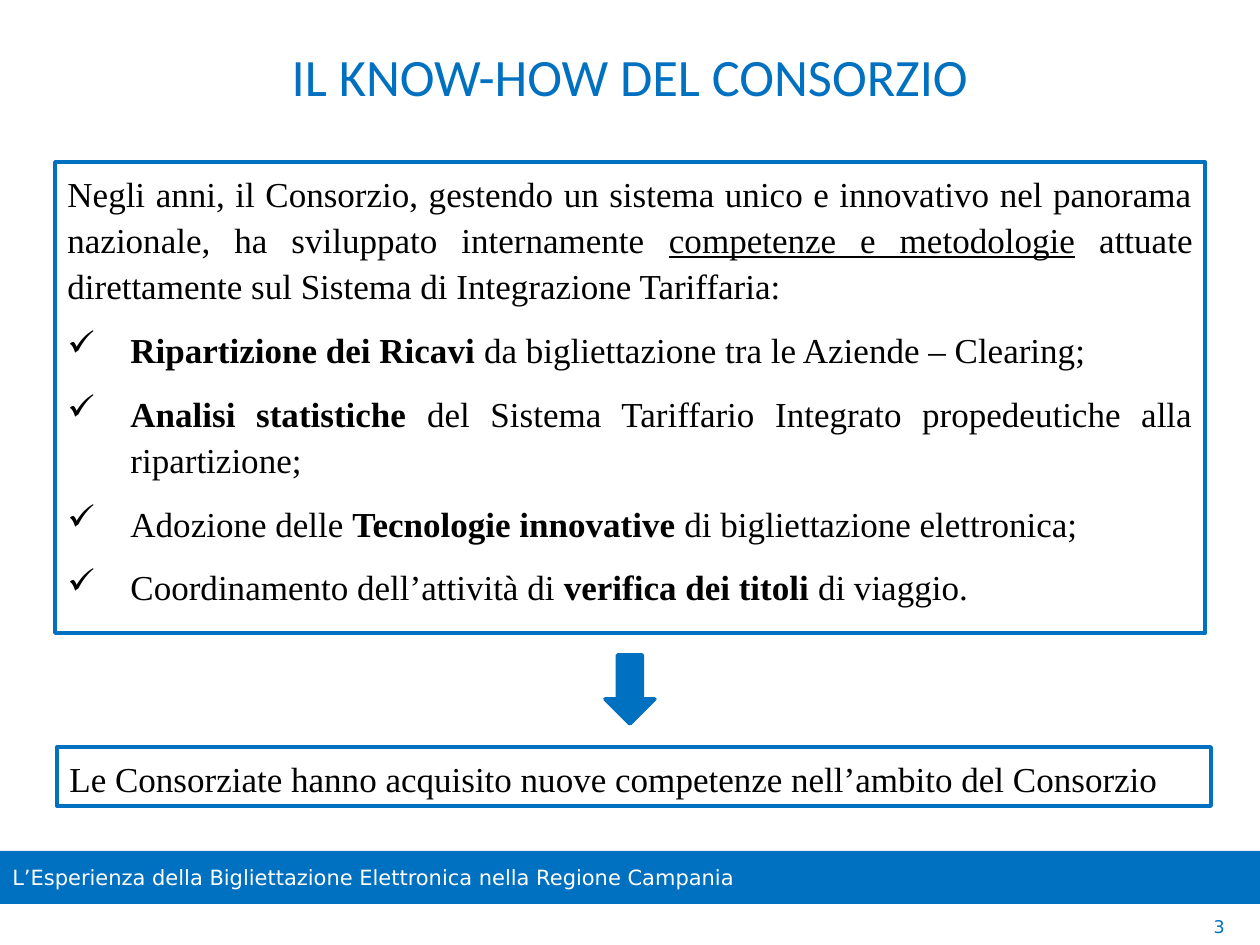
"""Builds the slide on the know-how of the consortium."""
import pptx
import pptx.util
import pptx.dml.color
import pptx.enum.shapes
import pptx.enum.text
import pptx.oxml
import pptx.oxml.ns

HUES = {"blue": "0070C0", "black": "000000", "white": "FFFFFF"}
SERIF, SANS, HEAD = "Times New Roman", "DejaVu Sans", "Calibri"
SCALE = 914400 / 126
ALIGN = pptx.enum.text.PP_ALIGN
ANCHOR = pptx.enum.text.MSO_ANCHOR
SHAPE = pptx.enum.shapes.MSO_SHAPE

INTRO = [
    ("Negli anni, il Consorzio, gestendo un sistema unico e innovativo "
     "nel panorama nazionale, ha sviluppato internamente ", ""),
    ("competenze e metodologie", "u"),
    (" attuate direttamente sul Sistema di Integrazione Tariffaria:", ""),
]
SKILLS = [
    [("Ripartizione dei Ricavi ", "b"),
     ("da bigliettazione tra le Aziende – Clearing;", "")],
    [("Analisi statistiche ", "b"),
     ("del Sistema Tariffario Integrato propedeutiche alla ripartizione;", "")],
    [("Adozione delle ", ""), ("Tecnologie innovative ", "b"),
     ("di bigliettazione elettronica;", "")],
    [("Coordinamento dell’attività di ", ""), ("verifica dei titoli ", "b"),
     ("di viaggio.", "")],
]
RESULT = [("Le Consorziate hanno acquisito nuove competenze "
           "nell’ambito del Consorzio", "")]


def px(num):
    """Turn pixels into EMU."""
    return pptx.util.Emu(round(num * SCALE))


def rgb(hue):
    """Look up a colour by name."""
    return pptx.dml.color.RGBColor.from_string(HUES[hue])


class Deck:
    """Holds the style and the current slide."""

    def __init__(self, wide, high):
        self.file = pptx.Presentation()
        self.file.slide_width, self.file.slide_height = px(wide), px(high)
        self.slide = self.file.slides.add_slide(self.file.slide_layouts[5])

    def style(self, para, face, size, hue, align):
        """Set the font and alignment of a paragraph."""
        para.alignment = align
        para.font.name = face
        para.font.size = pptx.util.Pt(size)
        para.font.color.rgb = rgb(hue)

    def title(self, text, *area):
        """Place and fill the title."""
        head = self.slide.shapes.title
        head.left, head.top, head.width, head.height = map(px, area)
        head.text_frame.text = text
        head.text_frame.vertical_anchor = ANCHOR.TOP
        self.style(head.text_frame.paragraphs[0], HEAD, 30, "blue", ALIGN.CENTER)

    def shape(self, kind, area, fill=None, line=None):
        """Add a preset shape with an optional fill and line."""
        item = self.slide.shapes.add_shape(kind, *map(px, area))
        item.shadow.inherit = False
        if fill:
            item.fill.solid()
            item.fill.fore_color.rgb = rgb(fill)
        else:
            item.fill.background()
        if line:
            item.line.color.rgb = rgb("blue")
            item.line.width = pptx.util.Pt(line)
        else:
            item.line.fill.background()
        return item

    def label(self, item, text, size, hue, align):
        """Write one centred-height line into a shape."""
        frame = item.text_frame
        frame.word_wrap = True
        frame.vertical_anchor = ANCHOR.MIDDLE
        frame.text = text
        self.style(frame.paragraphs[0], SANS, size, hue, align)

    def note(self, text, *area):
        """Add a small text box set to the right."""
        item = self.slide.shapes.add_textbox(*map(px, area))
        self.label(item, text, 10, "blue", ALIGN.RIGHT)

    def tick(self, para):
        """Give a paragraph a hanging check mark."""
        props = para._p.get_or_add_pPr()
        props.set("marL", str(px(63)))
        props.set("indent", str(px(-63)))
        mark = pptx.oxml.parse_xml(
            f'<a:buChar {pptx.oxml.ns.nsdecls("a")} char="✓"/>')
        props.insert_element_before(mark, "a:tabLst", "a:defRPr", "a:extLst")

    def panel(self, area, lead, items=()):
        """Add an outlined box with a lead and ticked items."""
        frame = self.shape(SHAPE.RECTANGLE, area, line=2.25).text_frame
        frame.word_wrap = True
        frame.vertical_anchor = ANCHOR.TOP
        for num, runs in enumerate([lead, *items]):
            para = frame.add_paragraph() if num else frame.paragraphs[0]
            self.style(para, SERIF, 20, "black", ALIGN.JUSTIFY)
            para.line_spacing = 1.1
            para.space_before = pptx.util.Pt(10 if num else 0)
            if num:
                self.tick(para)
            for text, look in runs:
                run = para.add_run()
                run.text = text
                if look == "b":
                    run.font.bold = True
                if look == "u":
                    run.font.underline = True


def main():
    """Build and save the slide."""
    deck = Deck(1260, 945)
    bar = deck.shape(SHAPE.RECTANGLE, (0, 851, 1260, 53), fill="blue")
    deck.label(bar, "L’Esperienza della Bigliettazione Elettronica "
               "nella Regione Campania", 12, "white", ALIGN.LEFT)
    deck.title("IL KNOW-HOW DEL CONSORZIO", 63, 38, 1134, 127)
    deck.panel((55, 162, 1150, 471), INTRO, SKILLS)
    deck.shape(SHAPE.DOWN_ARROW, (605, 655, 50, 69), fill="blue", line=2)
    deck.panel((57, 747, 1154, 59), RESULT)
    deck.note("3", 954, 910, 283, 33)
    deck.file.save("out.pptx")


if __name__ == "__main__":
    main()
